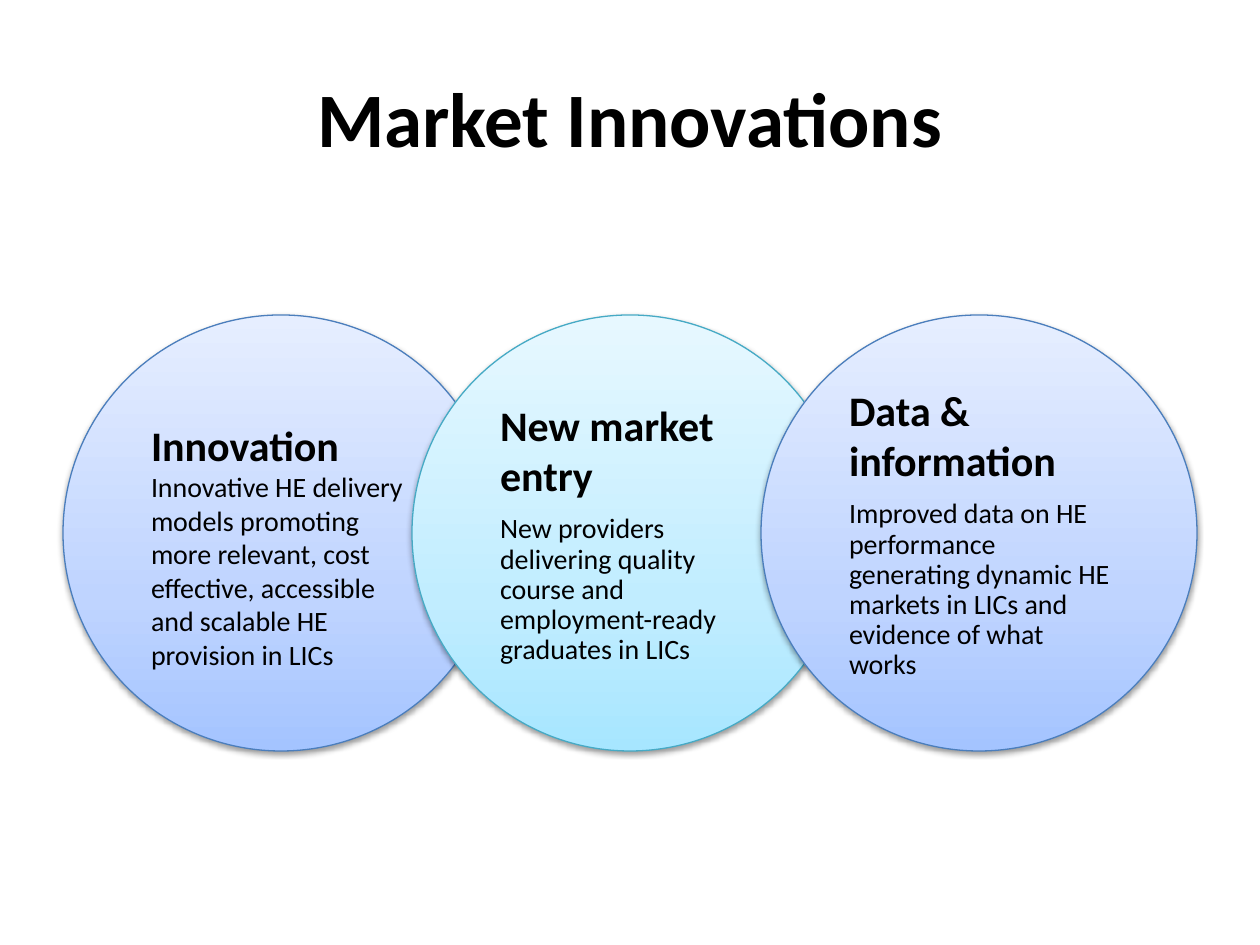
from dataclasses import dataclass

from lxml import etree
from pptx import Presentation, util as u
from pptx.dml.color import RGBColor
from pptx.enum import shapes, text
from pptx.oxml import parse_xml
from pptx.oxml.ns import nsdecls, qn

EMU_PER_PX = 914400 / 126


@dataclass(frozen=True)
class Theme:
    font: str = "Calibri"
    ink: str = "000000"
    title: int = 44
    heading: int = 24
    body: int = 16
    # Gradient stops from bottom to top, then outline
    blue: tuple = (("A4C4FF", "BFD4FF", "E6EEFF"), "4B7EBC")
    aqua: tuple = (("A7E6FF", "C1EDFF", "E7F8FF"), "46AAC5")


THEME = Theme()
STOPS = (0, 35, 100)

# Heading, body, colours, heading format, body format
CIRCLES = [
    ("Innovation",
     "Innovative HE delivery models promoting more relevant, cost effective, "
     "accessible and scalable HE provision in LICs",
     THEME.blue, {"line_spacing": 1.5}, {"after": 35}),
    ("New market entry",
     "New providers delivering quality course and employment-ready graduates in LICs",
     THEME.aqua, {"after": 35}, {"line_spacing": 0.9, "after": 35}),
    ("Data & information",
     "Improved data on HE performance generating dynamic HE markets in LICs "
     "and evidence of what works",
     THEME.blue, {"after": 35}, {"line_spacing": 0.9, "after": 35}),
]


def px(n):
    return u.Emu(round(n * EMU_PER_PX))


def set_attrs(obj, values):
    for name, value in values.items():
        setattr(obj, name, value)


def add_text(parent, box, insets=(13, 6)):
    tf = parent.add_textbox(*map(px, box)).text_frame
    dx, dy = map(px, insets)
    set_attrs(tf, {"word_wrap": True, "vertical_anchor": text.MSO_ANCHOR.MIDDLE,
                   "margin_left": dx, "margin_right": dx,
                   "margin_top": dy, "margin_bottom": dy})
    return tf


def write(p, words, size, bold=False, after=0, **fmt):
    """Fill a paragraph; after is its trailing space in percent."""
    set_attrs(p, {"space_after": u.Pt(0), **fmt})
    if after:
        spacing = p._p.pPr.find(qn("a:spcAft"))
        spacing.remove(spacing[0])
        etree.SubElement(spacing, qn("a:spcPct"), val=str(after * 1000))
    r = p.add_run()
    r.text = words
    set_attrs(r.font, {"name": THEME.font, "size": u.Pt(size), "bold": bold})
    r.font.color.rgb = RGBColor.from_string(THEME.ink)


def style_circle(sp, colours):
    stops, outline = colours
    sp.line.color.rgb = RGBColor.from_string(outline)
    sp.line.width = u.Pt(0.75)
    # Vertical three-stop gradient
    gs = "".join(f'<a:gs pos="{pos * 1000}"><a:srgbClr val="{c}"/></a:gs>'
                 for pos, c in zip(STOPS, stops))
    sp._element.spPr.find(qn("a:prstGeom")).addnext(parse_xml(
        f'<a:gradFill {nsdecls("a")} rotWithShape="1"><a:gsLst>{gs}</a:gsLst>'
        '<a:lin ang="16200000" scaled="0"/></a:gradFill>'))
    # Soft shadow straight below
    sp.shadow.inherit = False
    sp._element.spPr.find(qn("a:effectLst")).append(parse_xml(
        f'<a:outerShdw {nsdecls("a")} blurRad="{u.Pt(3.1)}" dist="{u.Pt(1.6)}" '
        'dir="5400000" rotWithShape="0"><a:srgbClr val="000000">'
        '<a:alpha val="38000"/></a:srgbClr></a:outerShdw>'))


def add_circle(parent, left, heading, body, colours, heading_fmt, body_fmt):
    top, size, label_offset, label_size = 315, 436, 64, 309
    sp = parent.add_shape(shapes.MSO_SHAPE.OVAL, *map(px, (left, top, size, size)))
    style_circle(sp, colours)
    tf = add_text(parent, (left + label_offset, top + label_offset - 1,
                           label_size, label_size), (24, 4))
    write(tf.paragraphs[0], heading, THEME.heading, bold=True, **heading_fmt)
    write(tf.add_paragraph(), body, THEME.body, **body_fmt)


def main():
    prs = Presentation()
    set_attrs(prs, {"slide_width": px(1260), "slide_height": px(945)})
    s = prs.slides.add_slide(prs.slide_layouts[6])

    # Title
    tf = add_text(s.shapes, (63, 38, 1134, 157))
    write(tf.paragraphs[0], "Market Innovations", THEME.title, bold=True,
          alignment=text.PP_ALIGN.CENTER)

    # Row of overlapping circles
    row = s.shapes.add_group_shape().shapes
    first, step = 63, 349
    for i, circle in enumerate(CIRCLES):
        add_circle(row, first + i * step, *circle)

    prs.save("out.pptx")


if __name__ == "__main__":
    main()
